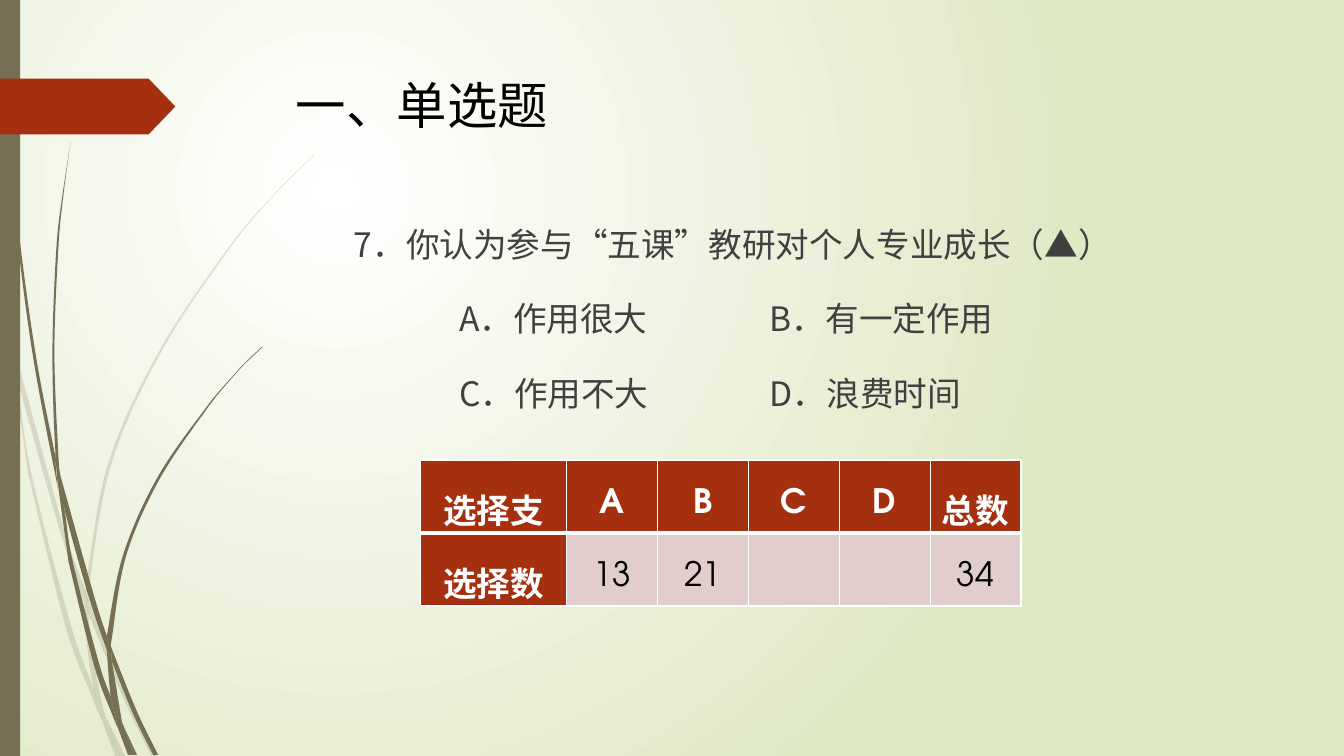
from lxml.etree import SubElement
from pptx import Presentation
from pptx.dml.color import RGBColor
from pptx.enum.shapes import MSO_SHAPE as Shape
from pptx.enum.text import MSO_ANCHOR as Anchor, PP_ALIGN as Align
from pptx.oxml.ns import qn
from pptx.util import Cm, Pt

SANS, GEOMETRIC = "Noto Sans CJK SC", "TeX Gyre Adventor"
OLIVE, RUST, PINK, WHITE = "766F54", "A53010", "E1CDCC", "FFFFFF"
GRASS_UNIT = Cm(0.0254)

# Each blade is a pair of edges, walked one after the other.
PALE_BLADES = [
    ([(11, 350), (9, 322), (0, 282)], [(0, 299), (10, 344)]),
    ([(85, 586), (62, 520), (14, 345)], [(17, 376), (58, 522), (84, 599)]),
    ([(92, 607), (88, 596)], [(88, 610), (123, 694), (150, 750)], [(155, 750), (127, 692), (92, 607)]),
    ([(119, 750), (124, 750)], [(105, 711), (119, 750)]),
    ([(93, 683), (70, 619), (31, 469), (17, 376), (11, 350)],
     [(28, 470), (65, 621), (92, 693), (101, 714)], [(99, 707), (93, 683)]),
    ([(84, 599), (87, 646), (93, 683), (96, 692), (105, 711)],
     [(103, 706), (91, 646), (88, 610), (88, 608), (84, 599)]),
    ([(88, 596), (88, 584), (110, 462), (160, 349), (229, 245), (268, 198), (290, 175), (312, 154)],
     [(312, 153), (289, 175), (268, 197), (228, 244), (158, 348), (107, 461), (85, 584), (85, 586)]),
    ([(101, 714), (114, 750)], [(119, 750), (101, 714)]),
    ([(88, 608), (88, 596)], [(85, 586), (84, 599)]),
    ([(96, 692), (93, 683)], [(99, 707), (101, 714), (119, 750)], [(105, 711), (96, 692)]),
]
DARK_BLADES = [
    ([(3, 0), (4, 48), (7, 110), (17, 233), (33, 355), (56, 477), (57, 481)],
     [(55, 457), (55, 453), (36, 355), (19, 232), (8, 109), (5, 48), (4, 0)]),
    ([(60, 472), (64, 505), (88, 592), (106, 645)], [(106, 631), (93, 590), (60, 472)]),
    ([(113, 649), (110, 641)], [(111, 656), (132, 708), (152, 749)], [(157, 749), (136, 706), (113, 649)]),
    ([(110, 691), (98, 657), (72, 556), (64, 505), (57, 477)],
     [(68, 557), (93, 659), (111, 708), (117, 722)], [(116, 717), (110, 691)]),
    ([(60, 472), (58, 453), (54, 349), (58, 245), (63, 193), (70, 141)],
     [(62, 193), (56, 245), (52, 349), (55, 449), (60, 472)]),
    ([(133, 749), (136, 749)], [(122, 719), (133, 749)]),
    ([(57, 477), (64, 505)], [(60, 472), (55, 449)], [(55, 453), (57, 477)]),
    ([(110, 641), (111, 633), (125, 552), (158, 476), (205, 406), (231, 374), (245, 359), (261, 344)],
     [(260, 344), (245, 358), (231, 373), (204, 405), (156, 474), (122, 551), (106, 631)]),
    ([(117, 722), (127, 749)], [(131, 749), (117, 722)]),
    ([(106, 645), (110, 691), (116, 706), (122, 719)],
     [(121, 716), (111, 656), (109, 651), (106, 645)]),
    ([(106, 645), (109, 651), (111, 656)], [(110, 641), (106, 631)]),
    ([(116, 706), (110, 691)], [(116, 717), (117, 722), (130, 749)], [(133, 749), (122, 719), (116, 706)]),
]


def color(hex_code):
    return RGBColor.from_string(hex_code)


def curve_points(edge):
    """Return two Bezier handles and an end point for each step of a smooth edge."""
    padded = [edge[0], *edge, edge[-1]]
    points = []
    for before, start, end, after in zip(padded, padded[1:], padded[2:], padded[3:]):
        points.append([s + (e - b) / 6 for b, s, e in zip(before, start, end)])
        points.append([e - (a - s) / 6 for s, e, a in zip(start, end, after)])
        points.append(end)
    return points


def bend(shape):
    """Turn every three line segments of a freeform into one Bezier curve."""
    lines = list(shape._element.iter(qn("a:lnTo")))
    for first in range(0, len(lines), 3):
        curve = shape._element.makeelement(qn("a:cubicBezTo"))
        lines[first].addprevious(curve)
        for line in lines[first:first + 3]:
            curve.append(line[0])
            line.getparent().remove(line)


def paint(shape, fill, opacity=100):
    shape.shadow.inherit = False
    shape.line.fill.background()
    shape.fill.solid()
    shape.fill.fore_color.rgb = color(fill)
    if opacity < 100:
        tint = shape.fill._xPr.find(".//" + qn("a:srgbClr"))
        SubElement(tint, qn("a:alpha"), val=str(opacity * 1000))


def add_grass(page, blades, opacity=100):
    tuft = page.shapes.add_group_shape()
    for edges in blades:
        points = curve_points(edges[0])
        for last, edge in zip(edges, edges[1:]):
            points += [last[-1], edge[0], edge[0], *curve_points(edge)]
        start, *rest = [(x * GRASS_UNIT, y * GRASS_UNIT) for x, y in [edges[0][0], *points]]
        builder = tuft.shapes.build_freeform(*start)
        builder.add_line_segments(rest)
        blade = builder.convert_to_shape()
        bend(blade)
        paint(blade, OLIVE, opacity)


def add_block(page, kind, left, top, width, height, fill):
    block = page.shapes.add_shape(kind, Cm(left), Cm(top), Cm(width), Cm(height))
    paint(block, fill)
    return block


def set_background(page):
    """Radial gradient centred in the upper left quarter."""
    fill = page.background.fill
    fill.gradient()
    for stop, shade in zip(fill.gradient_stops, (WHITE, "DFE8C4")):
        stop.color.rgb = color(shade)
    gradient = page.element.find(".//" + qn("a:gradFill"))
    gradient.remove(gradient.find(qn("a:lin")))
    circle = SubElement(gradient, qn("a:path"), path="circle")
    SubElement(circle, qn("a:fillToRect"), l="50000", t="50000", r="100000", b="100000")


def format_runs(para, size, shade, latin=SANS, bold=False):
    for span in para.runs:
        font = span.font
        font.size, font.bold, font.name = Pt(size), bold, latin
        font.color.rgb = color(shade)
        SubElement(span._r.get_or_add_rPr(), qn("a:ea"), typeface=SANS)


def add_text(page, left, top, width, height, lines, size, shade, spacing=1.0, before=0, tabs=()):
    box = page.shapes.add_textbox(Cm(left), Cm(top), Cm(width), Cm(height))
    frame = box.text_frame
    frame.word_wrap = True
    frame.text = "\n".join(lines)
    for para in frame.paragraphs:
        para.line_spacing, para.space_before = spacing, Pt(before)
        format_runs(para, size, shade)
        if tabs:
            stops = SubElement(para._p.get_or_add_pPr(), qn("a:tabLst"))
            for tab in tabs:
                SubElement(stops, qn("a:tab"), pos=str(Cm(tab)), algn="l")


def set_borders(cell, bottom):
    properties = cell._tc.get_or_add_tcPr()
    for index, (side, width) in enumerate((("L", 1), ("R", 1), ("T", 1), ("B", bottom))):
        line = properties.makeelement(qn("a:ln" + side), w=str(Pt(width)))
        SubElement(SubElement(line, qn("a:solidFill")), qn("a:srgbClr"), val=WHITE)
        properties.insert(index, line)


def add_answer_table(page, rows, left, top, widths, row_height):
    frame = page.shapes.add_table(len(rows), len(widths), Cm(left), Cm(top),
                                  Cm(sum(widths)), Cm(row_height * len(rows)))
    table = frame.table
    for column, width in zip(table.columns, widths):
        column.width = Cm(width)
    for r, values in enumerate(rows):
        table.rows[r].height = Cm(row_height)
        for c, value in enumerate(values):
            cell = table.cell(r, c)
            heading = r == 0 or c == 0
            cell.fill.solid()
            cell.fill.fore_color.rgb = color(RUST if heading else PINK)
            cell.vertical_anchor = Anchor.MIDDLE
            cell.margin_left = cell.margin_right = Cm(0.18)
            cell.margin_top = cell.margin_bottom = 0
            set_borders(cell, bottom=3 if r == 0 else 1)
            para = cell.text_frame.paragraphs[0]
            para.text = value
            para.alignment, para.line_spacing = Align.CENTER, 1.5
            format_runs(para, 24, WHITE if heading else "000000", GEOMETRIC, heading)


def main():
    deck = Presentation()
    deck.slide_width, deck.slide_height = Cm(33.87), Cm(19.05)
    page = deck.slides.add_slide(deck.slide_layouts[6])
    set_background(page)
    add_grass(page, PALE_BLADES, opacity=20)
    add_grass(page, DARK_BLADES)
    add_block(page, Shape.RECTANGLE, 0, 0, 0.51, 19.05, OLIVE)
    arrow = add_block(page, Shape.PENTAGON, 0, 1.98, 4.42, 1.41, RUST)
    arrow.adjustments[0] = 0.48
    add_text(page, 7.21, 1.75, 24.77, 3.56, ["一、单选题"], 36, "000000")
    add_text(page, 8.67, 5, 20.5, 6.15, [
        "7．你认为参与“五课”教研对个人专业成长（▲）",
        "\tA．作用很大\tB．有一定作用",
        "\tC．作用不大\tD．浪费时间",
    ], 24, "404040", spacing=1.5, before=10, tabs=(2.65, 10.48))
    add_answer_table(page, [
        ["选择支", "A", "B", "C", "D", "总数"],
        ["选择数", "13", "21", "", "", "34"],
    ], 10.6, 11.59, [3.68] + [2.29] * 5, 1.84)
    deck.save("out.pptx")


if __name__ == "__main__":
    main()
